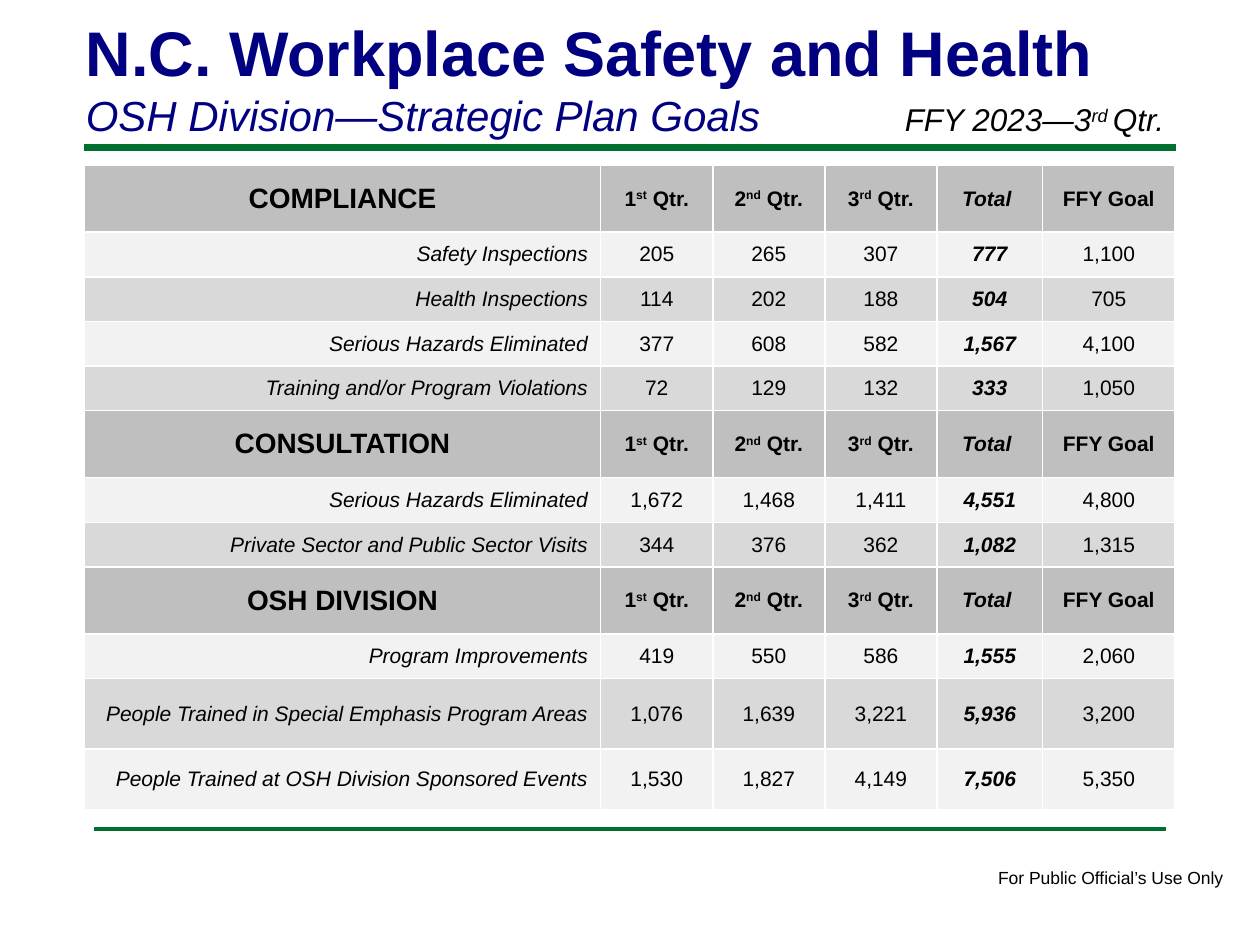
from dataclasses import dataclass

from lxml.etree import SubElement
from pptx import Presentation
from pptx.dml.color import RGBColor
from pptx.enum.text import MSO_ANCHOR, MSO_AUTO_SIZE, PP_ALIGN
from pptx.enum.shapes import MSO_CONNECTOR
from pptx.oxml.ns import qn
from pptx.util import Cm, Pt


@dataclass(frozen=True)
class Theme:
    """Colours, typeface and type sizes of the report."""
    font: str = "Arial"
    ink: str = "000000"
    navy: str = "000080"
    green: str = "007030"
    border: str = "FFFFFF"
    header_fill: str = "BFBFBF"
    bands: tuple = ("F2F2F2", "D9D9D9")
    title: int = 36
    subtitle: int = 24
    period: int = 18
    section: int = 16
    body: int = 12
    footer: int = 10


THEME = Theme()
QUARTERS = ["1^st^ Qtr.", "2^nd^ Qtr.", "3^rd^ Qtr.", "Total ", "FFY Goal"]
TOTAL_COLUMN = 4
COLUMN_WIDTHS = [10.41, 2.26, 2.26, 2.26, 2.13, 2.67]
HEADER_HEIGHT, ROW_HEIGHT = 1.35, 0.9
TALL_ROWS = {10: 1.42, 11: 1.22}
SECTIONS = {
    "COMPLIANCE": [
        ("Safety Inspections", "205", "265", "307", "777", "1,100"),
        ("Health Inspections", "114", "202", "188", "504", "705"),
        ("Serious Hazards Eliminated", "377", "608", "582", "1,567", "4,100"),
        ("Training and/or Program Violations", "72", "129", "132", "333", "1,050"),
    ],
    "CONSULTATION": [
        ("Serious Hazards Eliminated", "1,672", "1,468", "1,411", "4,551", "4,800"),
        ("Private Sector and Public Sector Visits", "344", "376", "362", "1,082", "1,315"),
    ],
    "OSH DIVISION": [
        ("Program Improvements", "419", "550", "586", "1,555", "2,060"),
        ("People Trained in Special Emphasis Program Areas",
         "1,076", "1,639", "3,221", "5,936", "3,200"),
        ("People Trained at OSH Division Sponsored Events",
         "1,530", "1,827", "4,149", "7,506", "5,350"),
    ],
}


def write(paragraph, text, size, color=THEME.ink, bold=False, italic=False,
          align=PP_ALIGN.LEFT):
    """Write text in one style, raising the parts between carets."""
    paragraph.alignment = align
    font = paragraph.font
    font.name, font.size, font.bold, font.italic = THEME.font, Pt(size), bold, italic
    font.color.rgb = RGBColor.from_string(color)
    for index, part in enumerate(text.split("^")):
        run = paragraph.add_run()
        run.text = part
        if index % 2:
            run._r.get_or_add_rPr().set("baseline", "30000")


def add_text_frame(slide, left, top, width, height, wrap=True):
    """Add a text box that grows with its text and return its frame."""
    frame = slide.shapes.add_textbox(Cm(left), Cm(top), Cm(width), Cm(height)).text_frame
    frame.word_wrap = wrap
    frame.auto_size = MSO_AUTO_SIZE.SHAPE_TO_FIT_TEXT
    return frame


def add_rule(slide, left, top, width, weight):
    """Draw a horizontal green rule."""
    rule = slide.shapes.add_connector(
        MSO_CONNECTOR.STRAIGHT, Cm(left), Cm(top), Cm(left + width), Cm(top))
    rule.line.color.rgb = RGBColor.from_string(THEME.green)
    rule.line.width = Pt(weight)
    SubElement(rule._element.spPr, qn("a:effectLst"))


def add_heading(slide, left, top, width):
    """Place the title, subtitle, reporting period and rule."""
    add_rule(slide, left, top + 2.82, width, 4)
    heading = add_text_frame(slide, left - 0.22, top, 20.96, 2.82)
    write(heading.paragraphs[0], "N.C. Workplace Safety and Health",
          THEME.title, THEME.navy, bold=True)
    write(heading.add_paragraph(), "OSH Division—Strategic Plan Goals",
          THEME.subtitle, THEME.navy, italic=True)
    period = add_text_frame(slide, left + width - 5.71, top + 1.75, 6.35, 1.02)
    write(period.paragraphs[0], "FFY 2023—3^rd ^Qtr.", THEME.period, italic=True)


def style_cell(cell, fill):
    """Give a cell thin borders, a fill and middle anchoring."""
    properties = cell._tc.get_or_add_tcPr()
    for side in ("lnL", "lnR", "lnT", "lnB"):
        line = SubElement(properties, qn(f"a:{side}"), w=str(Pt(1)))
        solid = SubElement(line, qn("a:solidFill"))
        SubElement(solid, qn("a:srgbClr"), val=THEME.border)
    cell.fill.solid()
    cell.fill.fore_color.rgb = RGBColor.from_string(fill)
    cell.vertical_anchor = MSO_ANCHOR.MIDDLE


def fill_row(table, row, values, fill, is_header):
    """Fill one header or goal row of the table."""
    for column, value in enumerate(values):
        cell = table.cell(row, column)
        style_cell(cell, fill)
        is_label, is_total = column == 0, column == TOTAL_COLUMN
        write(cell.text_frame.paragraphs[0], value,
              THEME.section if is_header and is_label else THEME.body,
              bold=is_header or is_total,
              italic=is_total or (is_label and not is_header),
              align=PP_ALIGN.RIGHT if is_label and not is_header else PP_ALIGN.CENTER)


def add_goals_table(slide, left, top):
    """Place the table of quarterly results by section."""
    rows = []
    for section, goals in SECTIONS.items():
        rows.append(([section, *QUARTERS], THEME.header_fill, True))
        rows += [(goal, THEME.bands[index % 2], False) for index, goal in enumerate(goals)]
    heights = [TALL_ROWS.get(index, HEADER_HEIGHT if is_header else ROW_HEIGHT)
               for index, (_, _, is_header) in enumerate(rows)]
    table = slide.shapes.add_table(
        len(rows), len(COLUMN_WIDTHS), Cm(left), Cm(top),
        Cm(sum(COLUMN_WIDTHS)), Cm(sum(heights))).table
    table.first_row = table.horz_banding = False
    for column, width in zip(table.columns, COLUMN_WIDTHS):
        column.width = Cm(width)
    for index, (values, fill, is_header) in enumerate(rows):
        table.rows[index].height = Cm(heights[index])
        fill_row(table, index, values, fill, is_header)


def add_footer(slide, left, top, width):
    """Place the closing rule and the usage notice."""
    add_rule(slide, left, top, width, 2)
    notice = add_text_frame(slide, left + width - 3.63, top + 0.64, 5.11, 0.69, wrap=False)
    write(notice.paragraphs[0], "For Public Official’s Use Only", THEME.footer)


def main():
    """Build and save the slide."""
    presentation = Presentation()
    presentation.slide_width, presentation.slide_height = Cm(25.4), Cm(19.05)
    slide = presentation.slides.add_slide(presentation.slide_layouts[6])
    add_heading(slide, 1.7, 0.15, 22)
    add_goals_table(slide, 1.7, 3.33)
    add_footer(slide, 1.9, 16.71, 21.6)
    presentation.save("out.pptx")


if __name__ == "__main__":
    main()
